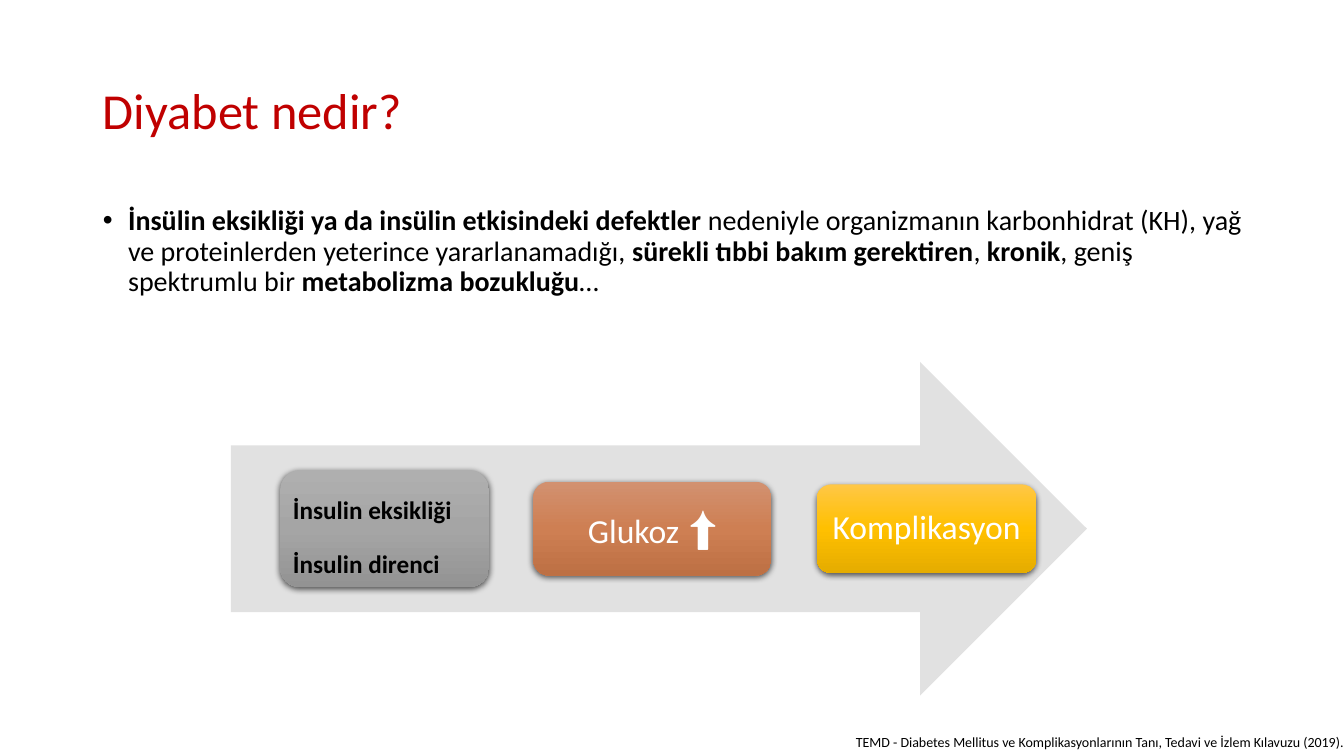
from copy import deepcopy

from pptx import Presentation
from pptx.dml.color import RGBColor
from pptx.enum.shapes import MSO_SHAPE
from pptx.enum.text import MSO_ANCHOR, MSO_AUTO_SIZE, PP_ALIGN
from pptx.oxml import parse_xml
from pptx.oxml.ns import nsdecls, qn
from pptx.util import Inches, Pt

ROUNDED, ARROW = MSO_SHAPE.ROUNDED_RECTANGLE, MSO_SHAPE.RIGHT_ARROW
MIDDLE, TOP = MSO_ANCHOR.MIDDLE, MSO_ANCHOR.TOP
LEFT, CENTER = PP_ALIGN.LEFT, PP_ALIGN.CENTER
NO_FIT = MSO_AUTO_SIZE.NONE

RED = RGBColor(0xC0, 0x00, 0x00)
BLACK = RGBColor(0x00, 0x00, 0x00)
WHITE = RGBColor(0xFF, 0xFF, 0xFF)
PALE_GRAY = RGBColor(0xE1, 0xE1, 0xE1)
GRAYS = [RGBColor(0xAF, 0xAF, 0xAF), RGBColor(0xA5, 0xA5, 0xA5), RGBColor(0x93, 0x93, 0x93)]
BROWNS = [RGBColor(0xD2, 0x91, 0x70), RGBColor(0xCE, 0x7F, 0x53), RGBColor(0xBD, 0x70, 0x44)]
YELLOWS = [RGBColor(0xFF, 0xC7, 0x46), RGBColor(0xFF, 0xC0, 0x00), RGBColor(0xE5, 0xAC, 0x00)]

# Content
TITLE = "Diyabet nedir?"
DEFINITION = [  # text, bold
    ("İnsülin eksikliği ya da insülin etkisindeki defektler ", True),
    ("nedeniyle organizmanın karbonhidrat (KH), yağ ve proteinlerden yeterince yararlanamadığı, ", False),
    ("sürekli tıbbi bakım gerektiren", True),
    (", ", False),
    ("kronik", True),
    (", geniş spektrumlu bir ", False),
    ("metabolizma bozukluğu", True),
    ("…", False),
]
# Each paragraph is a list of (text, size, font)
STEPS = [
    dict(left=2.78, width=2.07, height=1.16, colors=GRAYS, ink=BLACK, bold=True,
         align=LEFT, spacing=1.5, inset=0.07, after=6.3,
         lines=[[("İnsulin eksikliği", 18, "Calibri")], [("İnsulin direnci", 18, "Calibri")]]),
    dict(left=5.29, width=2.36, height=0.93, colors=BROWNS, ink=WHITE, bold=False,
         align=CENTER, spacing=0.9, inset=0.1, after=8.4,
         lines=[[("Glukoz", 24, "Calibri"), (" ", 32, "Calibri"), ("⬆", 32, "Arial")]]),
    dict(left=8.1, width=2.18, height=0.88, colors=YELLOWS, ink=WHITE, bold=False,
         align=CENTER, spacing=0.9, inset=0.1, after=8.4,
         lines=[[("Komplikasyon", 24, "Calibri")]]),
]
SOURCE = "TEMD - Diabetes Mellitus ve Komplikasyonlarının Tanı, Tedavi ve İzlem Kılavuzu (2019)."

# Layout in inches
MARGIN, CONTENT_WIDTH = 0.92, 11.5
ARROW_LEFT, ARROW_TOP, ARROW_WIDTH, ARROW_HEIGHT = 2.29, 3.59, 8.49, 3.31
AXIS = ARROW_TOP + ARROW_HEIGHT / 2


def place(shape, left, top, width, height):
    shape.left, shape.top = Inches(left), Inches(top)
    shape.width, shape.height = Inches(width), Inches(height)


def add_span(para, text, size, color, bold=False, font="Calibri"):
    span = para.add_run()
    span.text = text
    span.font.name, span.font.size, span.font.bold = font, Pt(size), bold
    span.font.color.rgb = color


def add_plain_shape(slide, kind, left, top, width, height):
    shape = slide.shapes.add_shape(kind, Inches(left), Inches(top), Inches(width), Inches(height))
    shape.line.fill.background()
    shape.shadow.inherit = False
    return shape


def fill_gradient(shape, colors):
    shape.fill.gradient()
    shape.fill.gradient_angle = 270
    stop_list = shape.element.spPr.find(".//" + qn("a:gsLst"))
    stop_list.insert(1, deepcopy(stop_list[0]))
    for stop, color, position in zip(shape.fill.gradient_stops, colors, (0, 0.5, 1)):
        stop.color.rgb, stop.position = color, position


def add_soft_shadow(shape):
    shape.element.spPr.find(qn("a:effectLst")).append(parse_xml(
        f'<a:outerShdw {nsdecls("a")} blurRad="{Pt(4.5)}" dist="{Pt(1.5)}" dir="5400000" '
        'algn="ctr" rotWithShape="0"><a:srgbClr val="000000"><a:alpha val="63000"/>'
        '</a:srgbClr></a:outerShdw>'))


def add_step(slide, step):
    box = add_plain_shape(slide, ROUNDED, step["left"], AXIS - step["height"] / 2,
                          step["width"], step["height"])
    fill_gradient(box, step["colors"])
    add_soft_shadow(box)
    frame = box.text_frame
    frame.word_wrap, frame.vertical_anchor = True, MIDDLE
    frame.margin_left = frame.margin_right = Inches(step["inset"])
    frame.margin_top = frame.margin_bottom = Inches(step["inset"])
    for number, line in enumerate(step["lines"]):
        para = frame.add_paragraph() if number else frame.paragraphs[0]
        para.alignment, para.line_spacing = step["align"], step["spacing"]
        para.space_after = Pt(step["after"])
        for text, size, font in line:
            add_span(para, text, size, step["ink"], step["bold"], font)


deck = Presentation()
deck.slide_width, deck.slide_height = Inches(13.33), Inches(7.5)
slide = deck.slides.add_slide(deck.slide_layouts[1])

# Title and definition
title, body = slide.shapes.title, slide.placeholders[1]
place(title, MARGIN, 0.4, CONTENT_WIDTH, 1.45)
place(body, MARGIN, 2, CONTENT_WIDTH, 4.76)
for holder, anchor in ((title, MIDDLE), (body, TOP)):
    frame = holder.text_frame
    frame.word_wrap, frame.auto_size, frame.vertical_anchor = True, NO_FIT, anchor
    para = frame.paragraphs[0]
    para.alignment, para.line_spacing, para.space_before = LEFT, 0.9, Pt(0)
add_span(title.text_frame.paragraphs[0], TITLE, 36, RED)
definition = body.text_frame.paragraphs[0]
properties = definition._p.get_or_add_pPr()
properties.set("marL", str(Inches(0.25)))
properties.set("indent", str(Inches(-0.25)))
for text, bold in DEFINITION:
    add_span(definition, text, 20, BLACK, bold)

# Process arrow with its steps
arrow = add_plain_shape(slide, ARROW, ARROW_LEFT, ARROW_TOP, ARROW_WIDTH, ARROW_HEIGHT)
arrow.fill.solid()
arrow.fill.fore_color.rgb = PALE_GRAY
for step in STEPS:
    add_step(slide, step)

# Source line
note = slide.shapes.add_textbox(Inches(8.39), Inches(7.23), Inches(5.14), Inches(0.27))
note.text_frame.word_wrap = False
add_span(note.text_frame.paragraphs[0], SOURCE, 10, BLACK)

deck.save("out.pptx")
